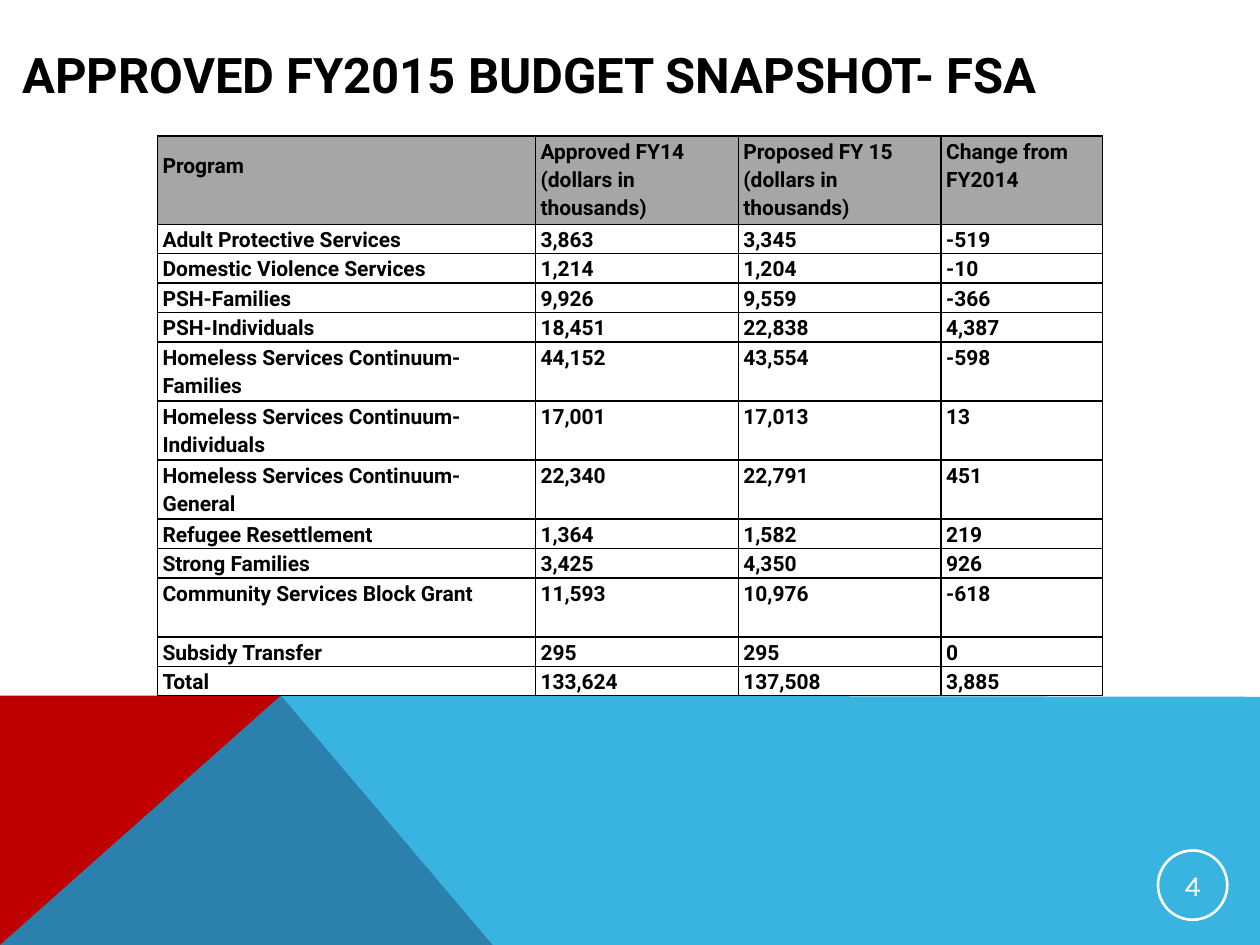
from lxml.etree import SubElement
from pptx import Presentation
from pptx.dml.color import RGBColor
from pptx.enum.shapes import MSO_SHAPE
from pptx.enum.text import MSO_ANCHOR, PP_ALIGN
from pptx.oxml import parse_xml
from pptx.oxml.ns import nsdecls, qn
from pptx.util import Inches, Pt

BLACK = RGBColor(0, 0, 0)
WHITE = RGBColor(0xFF, 0xFF, 0xFF)
RED = RGBColor(0xBF, 0x00, 0x00)
BLUE = RGBColor(0x08, 0xA1, 0xD9)
HEADER_GRAY = RGBColor(0xA6, 0xA6, 0xA6)

BAND_TOP = 5.52
PEAK = (2.23, BAND_TOP)

COLUMN_WIDTHS = [3, 1.61, 1.61, 1.28]
HEADER_HEIGHT, SINGLE_HEIGHT, DOUBLE_HEIGHT = 0.7, 0.234, 0.468
BUDGET = [
    ("Program", "Approved FY14 (dollars in thousands)",
     "Proposed FY 15 (dollars in thousands)", "Change from FY2014"),
    ("Adult Protective Services", "3,863", "3,345", "-519"),
    ("Domestic Violence Services", "1,214", "1,204", "-10"),
    ("PSH-Families", "9,926", "9,559", "-366"),
    ("PSH-Individuals", "18,451", "22,838", "4,387"),
    ("Homeless Services Continuum-Families", "44,152", "43,554", "-598"),
    ("Homeless Services Continuum-Individuals", "17,001", "17,013", "13"),
    ("Homeless Services Continuum-General", "22,340", "22,791", "451"),
    ("Refugee Resettlement", "1,364", "1,582", "219"),
    ("Strong Families", "3,425", "4,350", "926"),
    ("Community Services Block Grant", "11,593", "10,976", "-618"),
    ("Subsidy Transfer", "295", "295", "0"),
    ("Total", "133,624", "137,508", "3,885"),
]


def write_text(frame, text, size=12, font="Roboto", color=BLACK, bold=True,
               align=PP_ALIGN.LEFT, line_spacing=1.0):
    frame.word_wrap = True
    paragraph = frame.paragraphs[0]
    paragraph.alignment = align
    paragraph.line_spacing = line_spacing
    run = paragraph.add_run()
    run.text = text
    run.font.size = Pt(size)
    run.font.name = font
    run.font.bold = bold
    run.font.color.rgb = color


def add_band(slide, corners, color, opacity=100):
    points = [(Inches(x), Inches(y)) for x, y in corners]
    builder = slide.shapes.build_freeform(*points[0], scale=1.0)
    builder.add_line_segments(points[1:], close=True)
    band = builder.convert_to_shape()
    band.shadow.inherit = False
    band.line.fill.background()
    band.fill.solid()
    band.fill.fore_color.rgb = color
    if opacity < 100:
        color_node = band.fill._xPr.find(qn("a:solidFill"))[0]
        SubElement(color_node, qn("a:alpha"), val=str(opacity * 1000))


def add_title(slide, text):
    title = slide.shapes.add_textbox(
        Inches(0.08), Inches(0.17), Inches(9.04), Inches(0.83))
    title.text_frame.vertical_anchor = MSO_ANCHOR.MIDDLE
    write_text(title.text_frame, text, size=28)


def add_page_number(slide, number):
    badge = slide.shapes.add_shape(
        MSO_SHAPE.OVAL, Inches(9.19), Inches(6.75), Inches(0.55), Inches(0.55))
    badge.shadow.inherit = False
    badge.fill.background()
    badge.line.color.rgb = WHITE
    badge.line.width = Pt(1.5)
    frame = badge.text_frame
    frame.margin_left = frame.margin_right = Inches(0.01)
    frame.margin_top = frame.margin_bottom = Inches(0.01)
    frame.vertical_anchor = MSO_ANCHOR.MIDDLE
    write_text(frame, number, size=16.5, font="Karla", color=WHITE,
               bold=False, align=PP_ALIGN.CENTER)


def set_borders(cell, color=BLACK, width=1):
    properties = cell._tc.get_or_add_tcPr()
    for position, side in enumerate(("lnL", "lnR", "lnT", "lnB")):
        properties.insert(position, parse_xml(
            f'<a:{side} {nsdecls("a")} w="{Pt(width)}"><a:solidFill>'
            f'<a:srgbClr val="{color}"/></a:solidFill></a:{side}>'))


def row_height(index, program):
    if index == 0:
        return HEADER_HEIGHT
    return DOUBLE_HEIGHT if len(program) > 28 else SINGLE_HEIGHT


def add_budget_table(slide):
    heights = [row_height(i, row[0]) for i, row in enumerate(BUDGET)]
    table = slide.shapes.add_table(
        len(BUDGET), len(COLUMN_WIDTHS), Inches(1.25), Inches(1.08),
        Inches(sum(COLUMN_WIDTHS)), Inches(sum(heights))).table
    table.horz_banding = False
    for column, width in zip(table.columns, COLUMN_WIDTHS):
        column.width = Inches(width)
    for i, (values, height) in enumerate(zip(BUDGET, heights)):
        table.rows[i].height = Inches(height)
        for j, value in enumerate(values):
            cell = table.cell(i, j)
            cell.margin_left = cell.margin_right = Inches(0.04)
            cell.margin_top = cell.margin_bottom = 0
            if i == 0:
                cell.fill.solid()
                cell.fill.fore_color.rgb = HEADER_GRAY
            else:
                cell.fill.background()
            set_borders(cell)
            write_text(cell.text_frame, value, line_spacing=1.15)
    table.cell(0, 0).margin_top = Inches(0.11)


def main():
    presentation = Presentation()
    presentation.slide_width = Inches(10)
    presentation.slide_height = Inches(7.5)
    slide = presentation.slides.add_slide(presentation.slide_layouts[6])
    add_band(slide, [(0, 7.5), (0, BAND_TOP), PEAK, (3.91, 7.5)], RED)
    add_band(slide, [(0, 7.5), PEAK, (10, 5.53), (10, 7.5)], BLUE, opacity=80)
    add_title(slide, "APPROVED FY2015 BUDGET SNAPSHOT- FSA")
    add_page_number(slide, "4")
    add_budget_table(slide)
    presentation.save("out.pptx")


if __name__ == "__main__":
    main()
